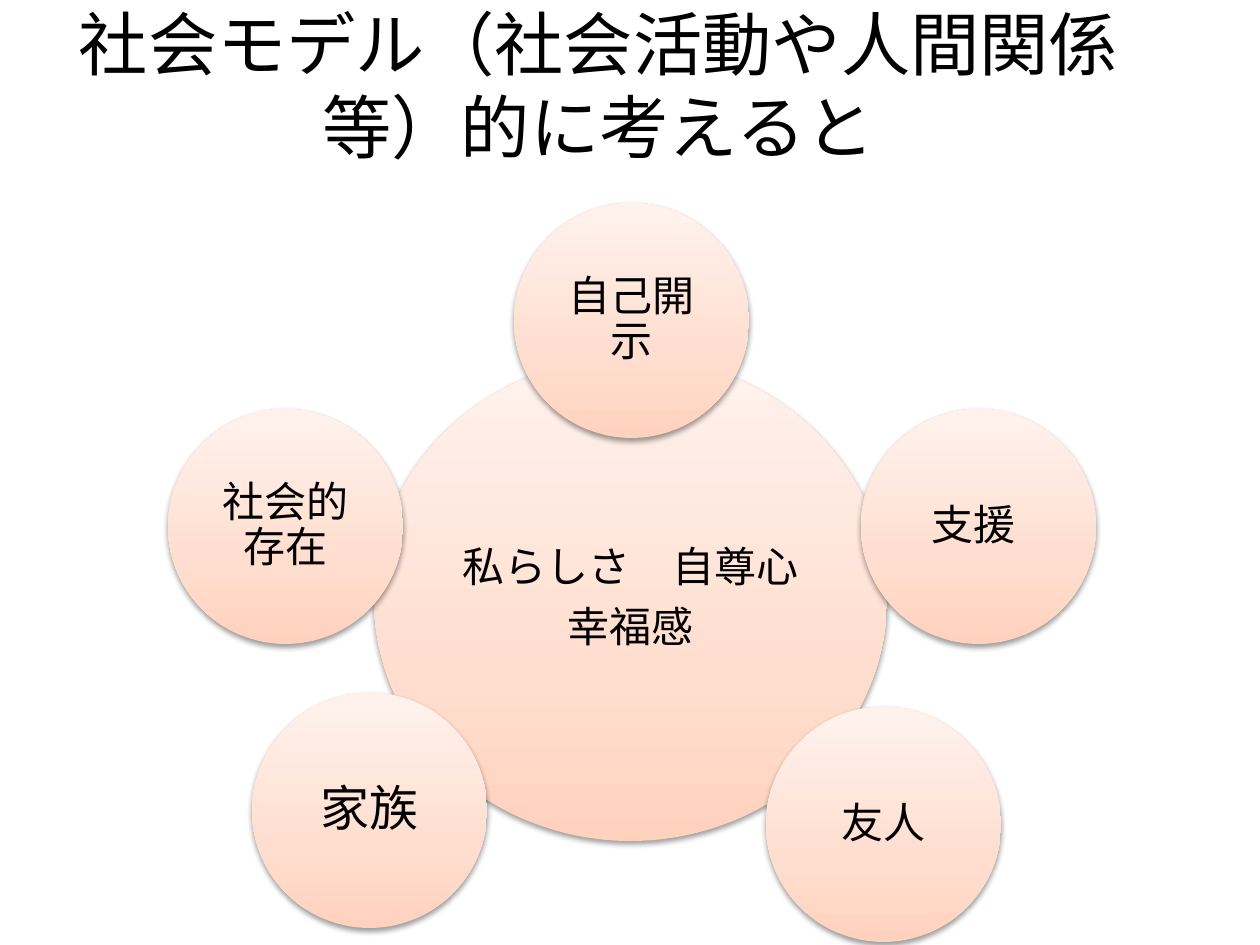
from lxml.etree import SubElement
from pptx import Presentation
from pptx.dml.color import RGBColor
from pptx.enum.shapes import MSO_SHAPE
from pptx.enum.text import MSO_ANCHOR, MSO_AUTO_SIZE, PP_ALIGN
from pptx.oxml.ns import qn
from pptx.util import Emu, Pt

TITLE = "社会モデル（社会活動や人間関係等）的に考えると"
CENTER = {"lines": ["私らしさ　自尊心", "幸福感"], "box": (374, 357, 513, 484)}
SATELLITES = [
    {"text": "自己開示", "at": (514, 203)},
    {"text": "支援 ", "at": (861, 409)},
    {"text": "友人", "at": (766, 707)},
    {"text": "家族", "at": (252, 693), "size": 28},
    {"text": "社会的存在", "at": (168, 409)},
]
SATELLITE_DIAMETER = 235
TITLE_BOX = (21, 21, 1155, 126)

THEME = {
    "text": "000000",
    "gradient": [(0, "FFD2BD"), (35, "FFDED0"), (100, "FFF2ED")],
    "shadow": "000000",
    "title_size": 39.6,
    "body_size": 24,
    "title_font": "Calibri",
    "body_font": "Arial",
}


def px(length):
    return Emu(round(length * 914400 / 126))


def place(shape, box):
    shape.left, shape.top, shape.width, shape.height = map(px, box)


def write_text(shape, lines, *, size, font, inset=4, line_spacing=None, space_after=0):
    frame = shape.text_frame
    frame.word_wrap = True
    frame.auto_size = MSO_AUTO_SIZE.NONE
    frame.vertical_anchor = MSO_ANCHOR.MIDDLE
    frame.margin_left = frame.margin_right = px(inset)
    frame.margin_top = frame.margin_bottom = px(inset)
    for index, line in enumerate(lines):
        paragraph = frame.add_paragraph() if index else frame.paragraphs[0]
        paragraph.alignment = PP_ALIGN.CENTER
        paragraph.line_spacing = line_spacing
        paragraph.space_after = Pt(space_after)
        run = paragraph.add_run()
        run.text = line
        run.font.size = Pt(size)
        run.font.name = font
        run.font.color.rgb = RGBColor.from_string(THEME["text"])


def add_child(parent, tag, **attributes):
    return SubElement(parent, qn(tag), {name: str(value) for name, value in attributes.items()})


def style_circle(shape):
    shape.line.fill.background()
    shape.fill.gradient()
    properties = shape.fill._xPr
    gradient = properties.find(qn("a:gradFill"))
    for child in list(gradient):
        gradient.remove(child)
    stops = add_child(gradient, "a:gsLst")
    for position, color in THEME["gradient"]:
        stop = add_child(stops, "a:gs", pos=position * 1000)
        add_child(stop, "a:srgbClr", val=color)
    add_child(gradient, "a:lin", ang=270 * 60000, scaled=0)

    shape.shadow.inherit = False
    effects = properties.find(qn("a:effectLst"))
    shadow = add_child(effects, "a:outerShdw", blurRad=Pt(3.1), dist=Pt(1.6),
                       dir=90 * 60000, rotWithShape=0)
    color = add_child(shadow, "a:srgbClr", val=THEME["shadow"])
    add_child(color, "a:alpha", val=38000)


def add_circle(slide, box, lines, size=THEME["body_size"]):
    circle = slide.shapes.add_shape(MSO_SHAPE.OVAL, *map(px, box))
    style_circle(circle)
    write_text(circle, lines, size=size, font=THEME["body_font"],
               line_spacing=0.9, space_after=size * 0.35)


def main():
    presentation = Presentation()
    presentation.slide_width, presentation.slide_height = px(1260), px(945)
    slide = presentation.slides.add_slide(presentation.slide_layouts[5])
    title = slide.shapes.title
    place(title, TITLE_BOX)
    write_text(title, [TITLE], size=THEME["title_size"], font=THEME["title_font"], inset=6)

    add_circle(slide, CENTER["box"], CENTER["lines"])
    for satellite in SATELLITES:
        box = (*satellite["at"], SATELLITE_DIAMETER, SATELLITE_DIAMETER)
        add_circle(slide, box, [satellite["text"]], satellite.get("size", THEME["body_size"]))
    presentation.save("out.pptx")


if __name__ == "__main__":
    main()
